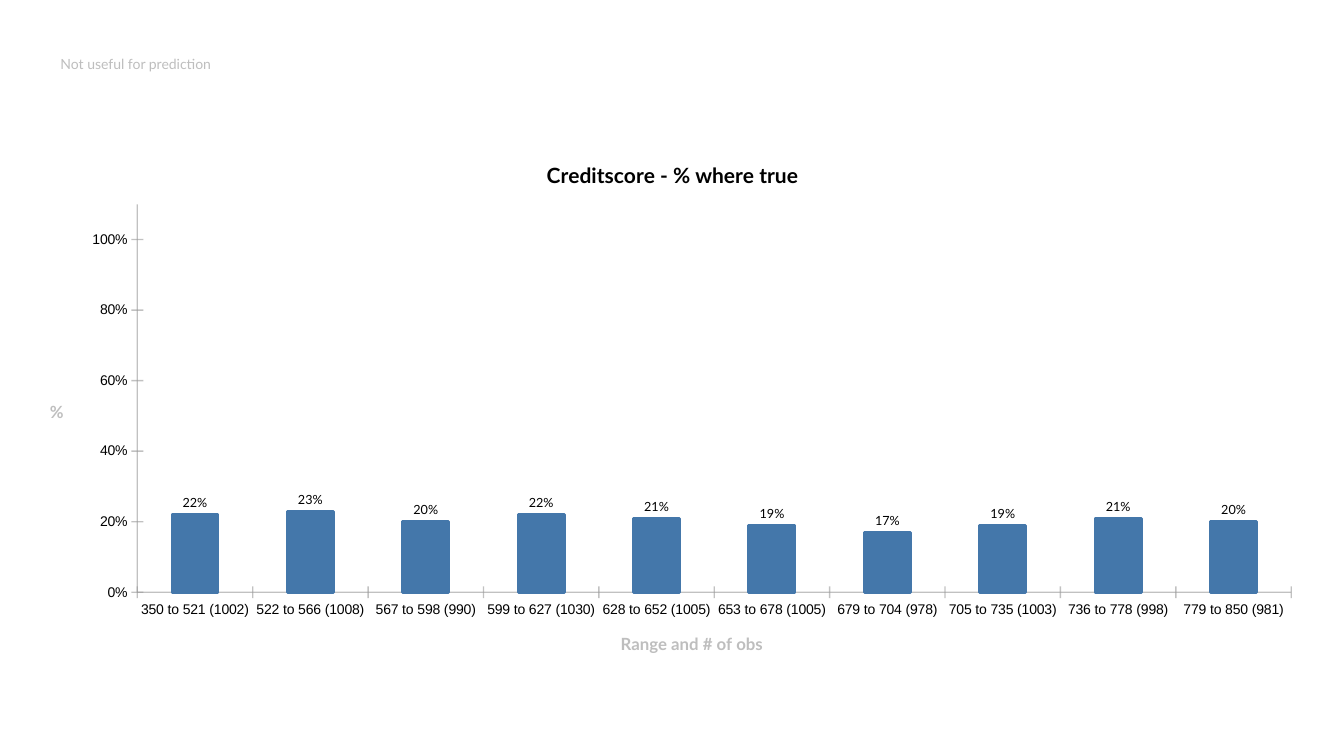
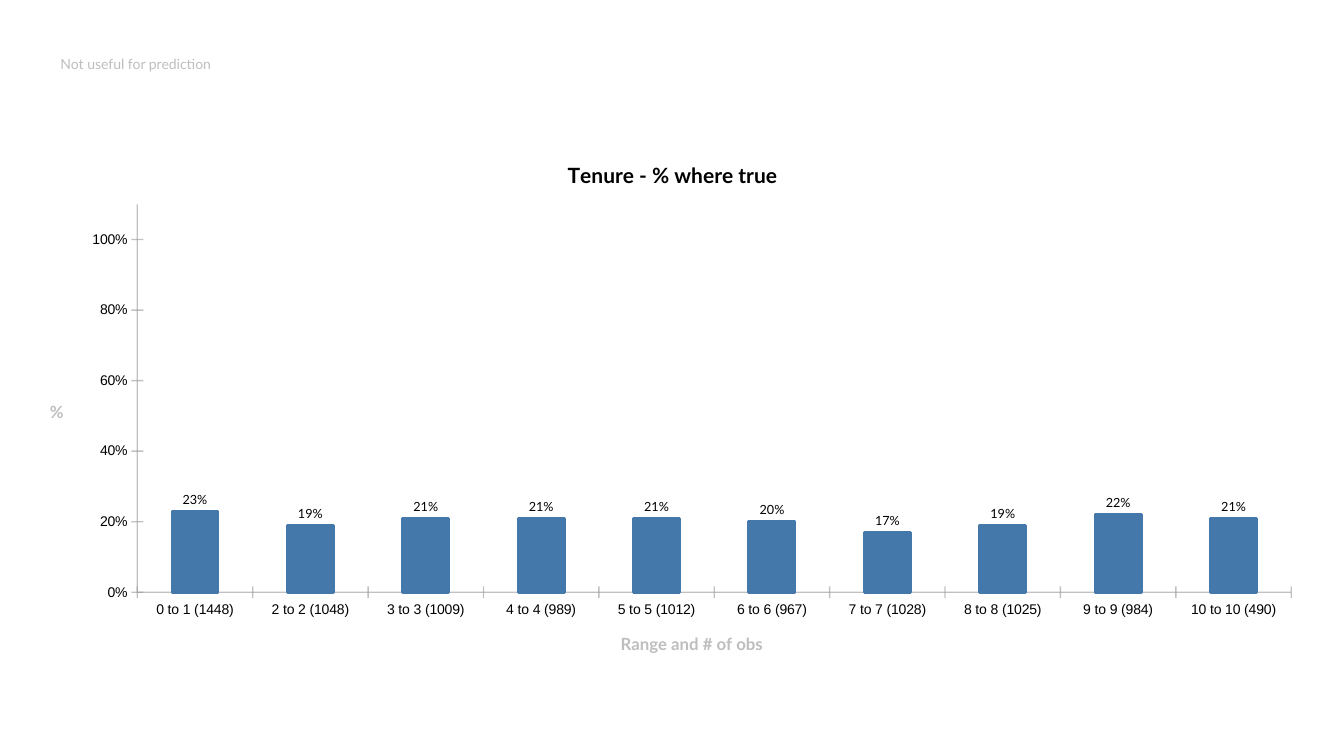
import pptx
import pptx.chart.data
import pptx.dml.color
import pptx.enum.chart
import pptx.enum.text
import pptx.oxml
import pptx.oxml.ns
import pptx.util

EMU_PER_PX = 9144
COLORS = {"text": "000000", "muted": "BEBEBE", "axis": "999999", "bar": "4477AA"}
PLOT_LAYOUT = {"x": 0.084, "y": 0.12, "w": 0.897, "h": 0.725}


def px(length):
    return pptx.util.Emu(length * EMU_PER_PX)


def rgb(name):
    return pptx.dml.color.RGBColor.from_string(COLORS[name])


class Deck:
    heading_font = "Lato"
    axis_font = "Arial"

    def __init__(self, width, height):
        self.presentation = pptx.Presentation()
        self.presentation.slide_width = px(width)
        self.presentation.slide_height = px(height)
        self.slide = None

    def add_slide(self):
        layout = self.presentation.slide_layouts[1]
        self.slide = self.presentation.slides.add_slide(layout)
        heading = self.slide.shapes.title.element
        heading.getparent().remove(heading)

    def style(self, font, size, color, bold=False, face=heading_font):
        font.name = face
        font.size = pptx.util.Pt(size)
        font.bold = bold
        font.color.rgb = rgb(color)

    def add_run(self, paragraph, text, size, color, bold=False):
        run = paragraph.add_run()
        run.text = text
        self.style(run.font, size, color, bold)

    def add_note(self, text, left, top, width, height):
        note = self.slide.placeholders[1]
        note.left, note.top = px(left), px(top)
        note.width, note.height = px(width), px(height)
        note.text_frame.word_wrap = True
        note.text_frame.vertical_anchor = pptx.enum.text.MSO_ANCHOR.TOP
        paragraph = note.text_frame.paragraphs[0]
        paragraph.alignment = pptx.enum.text.PP_ALIGN.LEFT
        paragraph.space_before = pptx.util.Pt(0)
        properties = paragraph._p.get_or_add_pPr()
        properties.set("marL", "0")
        properties.set("indent", "0")
        pptx.oxml.ns.qn("a:buNone")
        properties.append(properties.makeelement(pptx.oxml.ns.qn("a:buNone"), {}))
        self.add_run(paragraph, text, 10, "muted")

    def style_axis(self, axis, title):
        axis.has_major_gridlines = False
        axis.major_tick_mark = pptx.enum.chart.XL_TICK_MARK.CROSS
        axis.minor_tick_mark = pptx.enum.chart.XL_TICK_MARK.NONE
        self.style(axis.tick_labels.font, 10, "text", face=self.axis_font)
        line = axis.format.line
        line.width = pptx.util.Pt(1)
        line.color.rgb = rgb("axis")
        for color in axis._element.spPr.iter(pptx.oxml.ns.qn("a:srgbClr")):
            color.append(color.makeelement(pptx.oxml.ns.qn("a:alpha"), {"val": "60000"}))
        frame = axis.axis_title.text_frame
        self.add_run(frame.paragraphs[0], title, 12, "muted", bold=True)
        frame._txBody.bodyPr.set("rot", "0")

    def place_plot(self, chart):
        plot_area = chart._chartSpace.chart.plotArea
        for layout in plot_area.findall(pptx.oxml.ns.qn("c:layout")):
            plot_area.remove(layout)
        modes = "".join(f'<c:{key}Mode val="edge"/>' for key in "xy")
        sizes = "".join(f'<c:{key} val="{value}"/>' for key, value in PLOT_LAYOUT.items())
        plot_area.insert(0, pptx.oxml.parse_xml(
            f'<c:layout {pptx.oxml.ns.nsdecls("c")}><c:manualLayout>'
            f'<c:layoutTarget val="inner"/>{modes}{sizes}</c:manualLayout></c:layout>'))

    def add_rate_chart(self, title, rates, left, top, width, height):
        data = pptx.chart.data.CategoryChartData(number_format="0%")
        data.categories = list(rates)
        data.add_series("Series 1", [percent / 100 for percent in rates.values()])
        chart = self.slide.shapes.add_chart(
            pptx.enum.chart.XL_CHART_TYPE.COLUMN_CLUSTERED,
            px(left), px(top), px(width), px(height), data).chart
        self.style(chart.font, 18, "text")
        chart.has_legend = False
        chart.has_title = True
        heading = chart.chart_title
        heading.include_in_layout = False
        self.add_run(heading.text_frame.paragraphs[0], title, 15, "text", bold=True)

        self.style_axis(chart.category_axis, "Range and # of obs")
        rate_axis = chart.value_axis
        self.style_axis(rate_axis, "%")
        rate_axis.minimum_scale, rate_axis.maximum_scale = 0, 1.1
        rate_axis.major_unit = 0.2
        rate_axis.tick_labels.number_format = "0%"
        rate_axis.tick_labels.number_format_is_linked = False

        plot = chart.plots[0]
        plot.gap_width = 150
        plot.vary_by_categories = False
        bars = plot.series[0]
        bars.format.fill.solid()
        bars.format.fill.fore_color.rgb = rgb("bar")
        bars.format.line.color.rgb = rgb("bar")
        bars.format.line.width = pptx.util.Pt(2)
        labels = bars.data_labels
        labels.show_value = True
        labels.position = pptx.enum.chart.XL_LABEL_POSITION.OUTSIDE_END
        labels.number_format = "0%"
        labels.number_format_is_linked = False
        self.style(labels.font, 9, "text")
        self.place_plot(chart)


RATES_BY_FIELD = {
    "Creditscore": {
        "350 to 521 (1002)": 22, "522 to 566 (1008)": 23,
        "567 to 598 (990)": 20, "599 to 627 (1030)": 22,
        "628 to 652 (1005)": 21, "653 to 678 (1005)": 19,
        "679 to 704 (978)": 17, "705 to 735 (1003)": 19,
        "736 to 778 (998)": 21, "779 to 850 (981)": 20,
    },
    "Tenure": {
        "0 to 1 (1448)": 23, "2 to 2 (1048)": 19,
        "3 to 3 (1009)": 21, "4 to 4 (989)": 21,
        "5 to 5 (1012)": 21, "6 to 6 (967)": 20,
        "7 to 7 (1028)": 17, "8 to 8 (1025)": 19,
        "9 to 9 (984)": 22, "10 to 10 (490)": 21,
    },
}


def main():
    deck = Deck(1333, 750)
    for field, rates in RATES_BY_FIELD.items():
        deck.add_slide()
        deck.add_rate_chart(f"{field} - % where true", rates, 29, 139, 1276, 531)
        deck.add_note("Not useful for prediction", 50, 50, 600, 100)
    deck.presentation.save("out.pptx")


if __name__ == "__main__":
    main()
